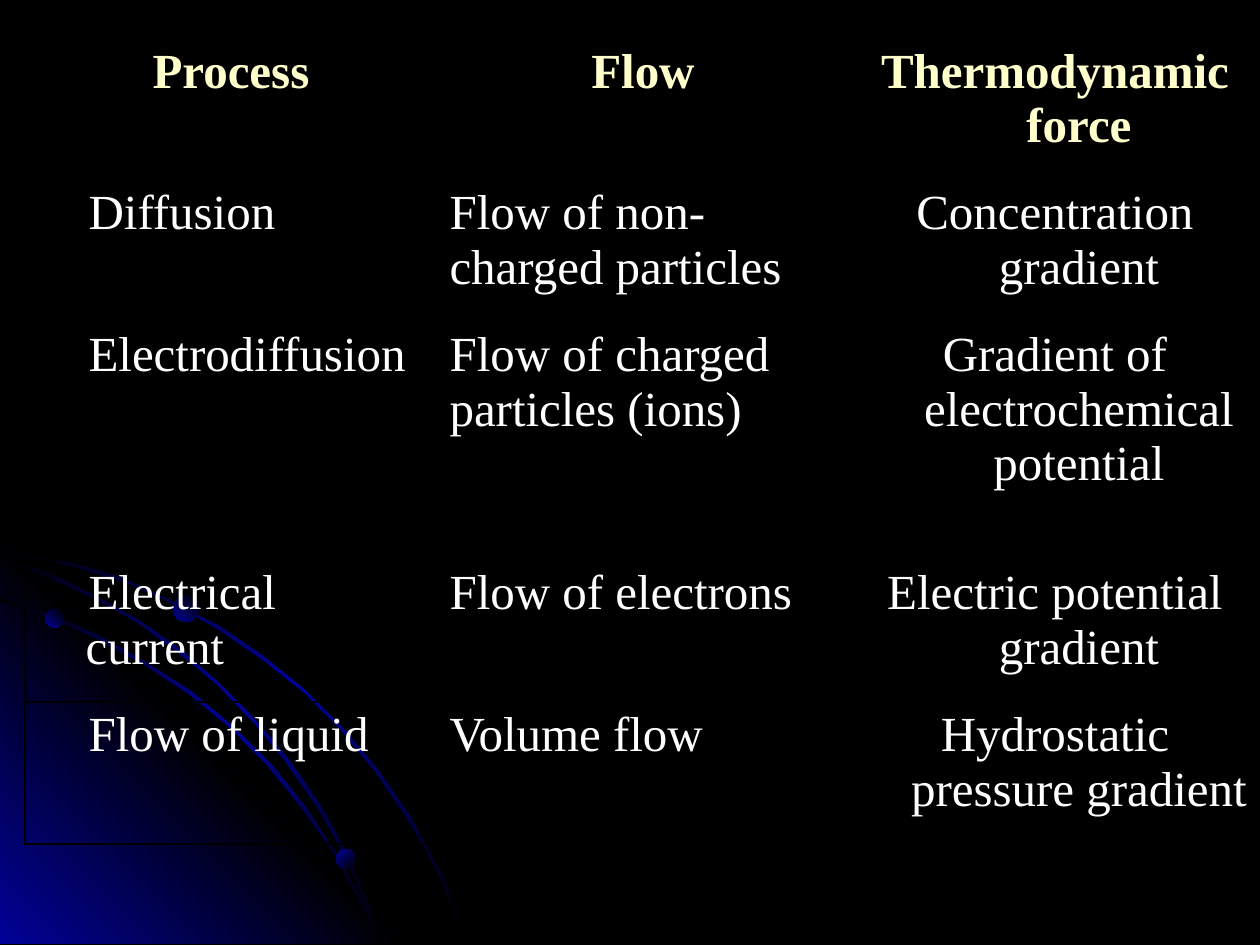
from lxml import etree
from copy import deepcopy
from pptx import Presentation
from pptx.dml.color import RGBColor
from pptx.enum import shapes, text
from pptx.oxml.ns import qn
from pptx import util as u

SCALE = 914400 / 126
BLUE, BLACK, CREAM, WHITE = "010199", "000000", "FFFFCC", "FFFFFF"
GLOW, FADE = [BLACK, BLUE, BLACK], [BLUE, BLACK]
DOWN, UP = 315, 45

ARCS = [
    [(72, 563), (35, 556), (0, 548), (0, 552), (35, 558), (71, 566), (122, 581),
     (170, 602), (218, 629), (262, 659), (304, 692), (341, 730), (375, 771),
     (407, 818), (425, 848), (441, 879), (454, 911), (466, 944), (469, 944),
     (456, 911), (444, 879), (427, 848), (410, 816), (378, 770), (343, 728),
     (305, 690), (263, 656), (219, 626), (171, 601), (123, 578)],
    [(359, 900), (370, 922), (379, 944), (382, 944), (373, 920), (360, 897),
     (335, 852), (305, 806), (271, 764), (232, 726), (192, 692), (147, 663),
     (100, 636), (52, 615), (0, 598), (0, 601), (49, 617), (97, 639),
     (145, 665), (189, 694), (231, 728), (268, 766), (302, 808), (334, 853)],
    [(0, 557), (0, 559), (45, 576), (93, 598), (137, 622), (179, 653),
     (218, 685), (255, 724), (286, 762), (318, 808), (336, 840), (353, 874),
     (368, 910), (379, 944), (382, 944), (370, 907), (355, 873), (339, 838),
     (320, 805), (289, 760), (257, 722), (220, 684), (181, 650), (140, 621),
     (96, 596), (49, 573)],
]
WEDGE = [(406, 944), (0, 944), (0, 538)]
DOTS = [(45, 609, 19, UP), (336, 849, 20, DOWN), (173, 596, 26, UP)]

ROWS = [
    ("Process", "Flow", "Thermodynamic force"),
    ("Diffusion", "Flow of non-charged particles", "Concentration gradient"),
    ("Electrodiffusion", "Flow of charged particles (ions)",
     "Gradient of electrochemical potential"),
    ("Electrical current", "Flow of electrons", "Electric potential gradient"),
    ("Flow of liquid", "Volume flow", "Hydrostatic pressure gradient"),
]
HEIGHTS = [142, 142, 238, 142, 142]


def px(n):
    return u.Emu(round(n * SCALE))


def color(code):
    return RGBColor.from_string(code)


class Deck:
    """Holds the text style and the current slide, and draws its elements."""

    def __init__(self, font, size):
        self.font, self.size = font, u.Pt(size)
        self.prs = Presentation()
        self.prs.slide_width, self.prs.slide_height = px(1260), px(945)
        self.slide = self.prs.slides.add_slide(self.prs.slide_layouts[6])
        fill = self.slide.background.fill
        fill.solid()
        fill.fore_color.rgb = color(BLACK)

    def shade(self, shape, hues, angle):
        shape.shadow.inherit = False
        shape.line.fill.background()
        shape.fill.gradient()
        shape.fill.gradient_angle = angle
        stops = next(shape._element.iter(qn("a:gsLst")))
        for _ in hues[2:]:
            stops.append(deepcopy(stops[0]))
        for i, (stop, hue) in enumerate(zip(shape.fill.gradient_stops, hues)):
            stop.position = i / (len(hues) - 1)
            stop.color.rgb = color(hue)

    def free(self, points, hues, angle):
        pen = self.slide.shapes.build_freeform(*points[0], scale=SCALE)
        pen.add_line_segments(points[1:], close=True)
        self.shade(pen.convert_to_shape(), hues, angle)

    def dot(self, x, y, size, angle):
        oval = self.slide.shapes.add_shape(
            shapes.MSO_SHAPE.OVAL, px(x), px(y), px(size), px(size))
        self.shade(oval, FADE, angle)

    def table(self, x, y, width, heights, rows):
        cols = len(rows[0])
        grid = self.slide.shapes.add_table(
            len(rows), cols, px(x), px(y), px(width * cols), px(sum(heights))).table
        grid.first_row = grid.horz_banding = False
        for col in grid.columns:
            col.width = px(width)
        for r, (row, high) in enumerate(zip(rows, heights)):
            grid.rows[r].height = px(high)
            for c, words in enumerate(row):
                self.cell(grid.cell(r, c), words, r == 0, c)

    def cell(self, cell, words, head, col):
        self.border(cell)
        cell.fill.background()
        cell.text = words
        para = cell.text_frame.paragraphs[0]
        font = para.font
        font.name, font.size, font.bold = self.font, self.size, head
        font.color.rgb = color(CREAM if head else WHITE)
        mid = head or col == 2
        para.alignment = text.PP_ALIGN.CENTER if mid else text.PP_ALIGN.LEFT
        if mid or col == 0:
            props = para._p.get_or_add_pPr()
            props.set("marL", str(px(48)))
            props.set("indent", str(px(-48 if mid else 3)))

    def border(self, cell):
        props = cell._tc.get_or_add_tcPr()
        for side in "LRTB":
            line = etree.SubElement(props, qn(f"a:ln{side}"), w=str(u.Pt(1)))
            solid = etree.SubElement(line, qn("a:solidFill"))
            etree.SubElement(solid, qn("a:srgbClr"), val=BLACK)


def main():
    deck = Deck("Times New Roman", 28)
    deck.free(ARCS[0], GLOW, DOWN)
    deck.free(WEDGE, [BLUE, BLACK, BLUE], UP)
    for arc in ARCS[1:]:
        deck.free(arc, GLOW, DOWN)
    for spot in DOTS:
        deck.dot(*spot)
    deck.table(25, 38, 412, HEIGHTS, ROWS)
    deck.prs.save("out.pptx")


if __name__ == "__main__":
    main()
